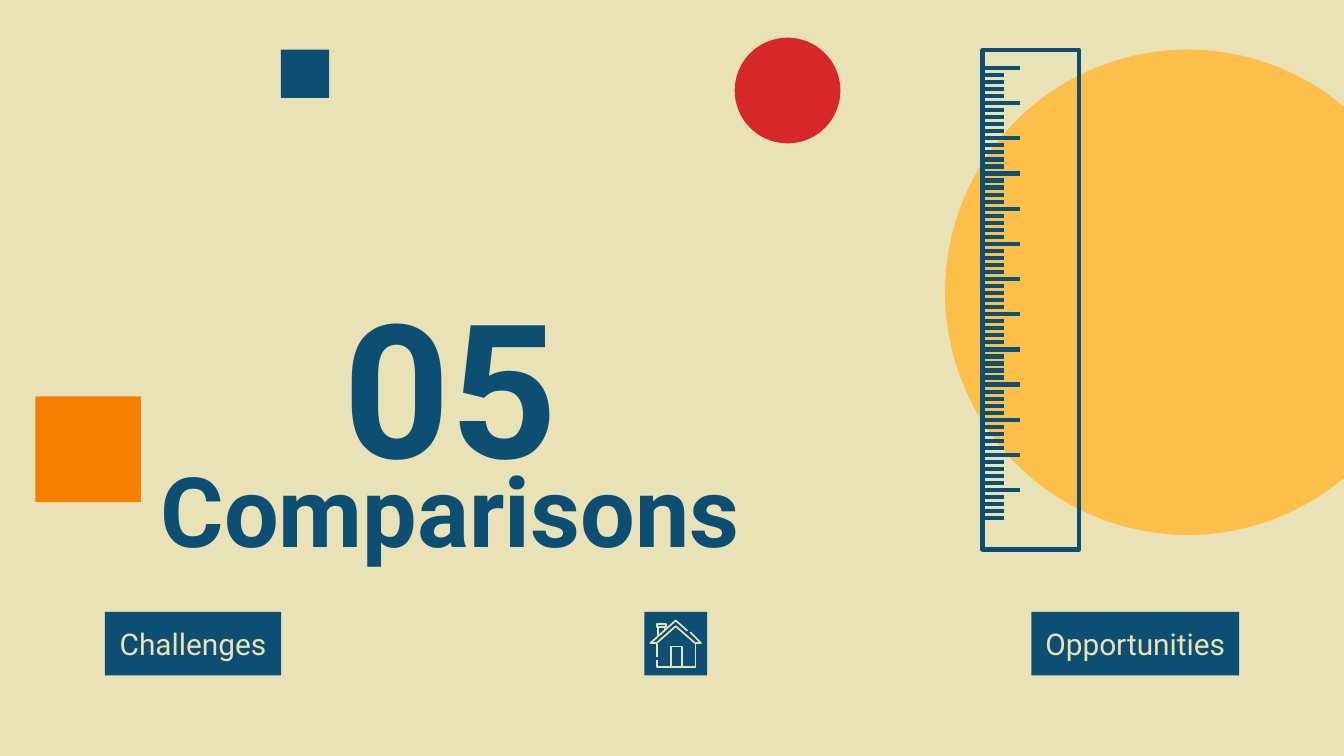
from lxml import etree
from pptx import Presentation
from pptx.dml.color import RGBColor
from pptx.enum.shapes import MSO_CONNECTOR, MSO_SHAPE
from pptx.enum.text import MSO_ANCHOR, PP_ALIGN
from pptx.oxml.ns import qn
from pptx.util import Pt

RECTANGLE = MSO_SHAPE.RECTANGLE
OVAL = MSO_SHAPE.OVAL
STRAIGHT = MSO_CONNECTOR.STRAIGHT
MIDDLE = MSO_ANCHOR.MIDDLE
CENTER = PP_ALIGN.CENTER

FONT = "Roboto"
NAVY, CREAM, YELLOW, ORANGE, RED = "0C4F72", "EAE2B7", "FCBF49", "F77F00", "D62828"

TITLES = [
    ("Comparisons", 52, (67.7, 242.6, 347, 59.8)),
    ("05", 100, (88.6, 162, 305.3, 87.1)),
]
SUN = (OVAL, YELLOW, (506.3, 26.6, 260, 260))
DECORATIONS = [
    (RECTANGLE, ORANGE, (18.9, 212.4, 56.6, 56.6)),
    (OVAL, RED, (393.6, 20.2, 56.6, 56.6)),
    (RECTANGLE, NAVY, (150.5, 26.6, 25.9, 25.9)),
]
BUTTON_TOP, BUTTON_HEIGHT = 327.8, 34
BUTTONS = [("Challenges", 56.2, 94.4), ("", 345.2, 33.7), ("Opportunities", 552.5, 111.4)]

RULER = (526.3, 26.6, 51.8, 267.8)
RULER_LINE = 2.25
TICK_LEFT, TICK_TOP, TICK_STEP, TICK_COUNT = 527, 36.4, 3.77, 65
MAJOR_EVERY, MAJOR_LENGTH, MINOR_LENGTH = 5, 19.4, 10.8

HOUSE_LEFT, HOUSE_TOP, HOUSE_LINE = 347.8, 331.9, 0.9
HOUSE_STROKES = [
    [(4, 2.5), (9, 2.5), (9, 4), (4, 4), (4, 2.5)],
    [(4.7, 4.3), (4.7, 8.6)],
    [(8.3, 4.3), (8.3, 5.4)],
    [(20.5, 6.1), (14.2, 0.5), (0.7, 12.6), (4, 12.6), (14.2, 3.6),
     (24.5, 12.6), (27.7, 12.6), (22, 6.8)],
    [(4, 13), (4, 20.2)],
    [(4, 21.6), (4, 25.6), (24.8, 25.6), (24.8, 13)],
    [(11.5, 25.6), (11.5, 14.4), (17.6, 14.4), (17.6, 25.6)],
]


def color(value):
    return RGBColor.from_string(value)


def set_line(shape, value, width):
    shape.line.color.rgb = color(value)
    shape.line.width = Pt(width)


def write_text(shape, text, size, text_color, bold=False):
    frame = shape.text_frame
    frame.word_wrap = True
    frame.vertical_anchor = MIDDLE
    frame.margin_left = frame.margin_right = Pt(7.2)
    frame.margin_top = frame.margin_bottom = Pt(7.2)
    paragraph = frame.paragraphs[0]
    paragraph.alignment = CENTER
    run = paragraph.add_run()
    run.text = text
    run.font.name = FONT
    run.font.size = Pt(size)
    run.font.bold = bold
    run.font.color.rgb = color(text_color)


def add_filled(shapes, kind, fill, box):
    shape = shapes.add_shape(kind, *map(Pt, box))
    shape.shadow.inherit = False
    shape.fill.solid()
    shape.fill.fore_color.rgb = color(fill)
    shape.line.fill.background()
    return shape


def add_ruler(slide):
    ruler = slide.shapes.add_group_shape()
    frame = ruler.shapes.add_shape(RECTANGLE, *map(Pt, RULER))
    frame.shadow.inherit = False
    frame.fill.background()
    set_line(frame, NAVY, RULER_LINE)
    for index in range(TICK_COUNT):
        length = MINOR_LENGTH if index % MAJOR_EVERY else MAJOR_LENGTH
        y = Pt(TICK_TOP + index * TICK_STEP)
        tick = ruler.shapes.add_connector(STRAIGHT, Pt(TICK_LEFT), y, Pt(TICK_LEFT + length), y)
        set_line(tick, NAVY, RULER_LINE)
        etree.SubElement(tick._element.spPr, qn("a:effectLst"))


def add_house(slide):
    house = slide.shapes.add_group_shape()
    for stroke in HOUSE_STROKES:
        points = [(Pt(HOUSE_LEFT + x), Pt(HOUSE_TOP + y)) for x, y in stroke]
        builder = house.shapes.build_freeform(*points[0])
        builder.add_line_segments(points[1:], close=False)
        shape = builder.convert_to_shape()
        shape.shadow.inherit = False
        shape.fill.background()
        set_line(shape, CREAM, HOUSE_LINE)


def main():
    presentation = Presentation()
    presentation.slide_width, presentation.slide_height = Pt(720), Pt(405)
    slide = presentation.slides.add_slide(presentation.slide_layouts[6])
    slide.background.fill.solid()
    slide.background.fill.fore_color.rgb = color(CREAM)

    for text, size, box in TITLES:
        title = slide.shapes.add_textbox(*map(Pt, box))
        write_text(title, text, size, NAVY, bold=True)
    add_filled(slide.shapes, *SUN)
    add_ruler(slide)
    for decoration in DECORATIONS:
        add_filled(slide.shapes, *decoration)
    for text, left, width in BUTTONS:
        box = (left, BUTTON_TOP, width, BUTTON_HEIGHT)
        button = add_filled(slide.shapes, RECTANGLE, NAVY, box)
        if text:
            write_text(button, text, 16, CREAM)
    add_house(slide)
    presentation.save("out.pptx")


if __name__ == "__main__":
    main()
